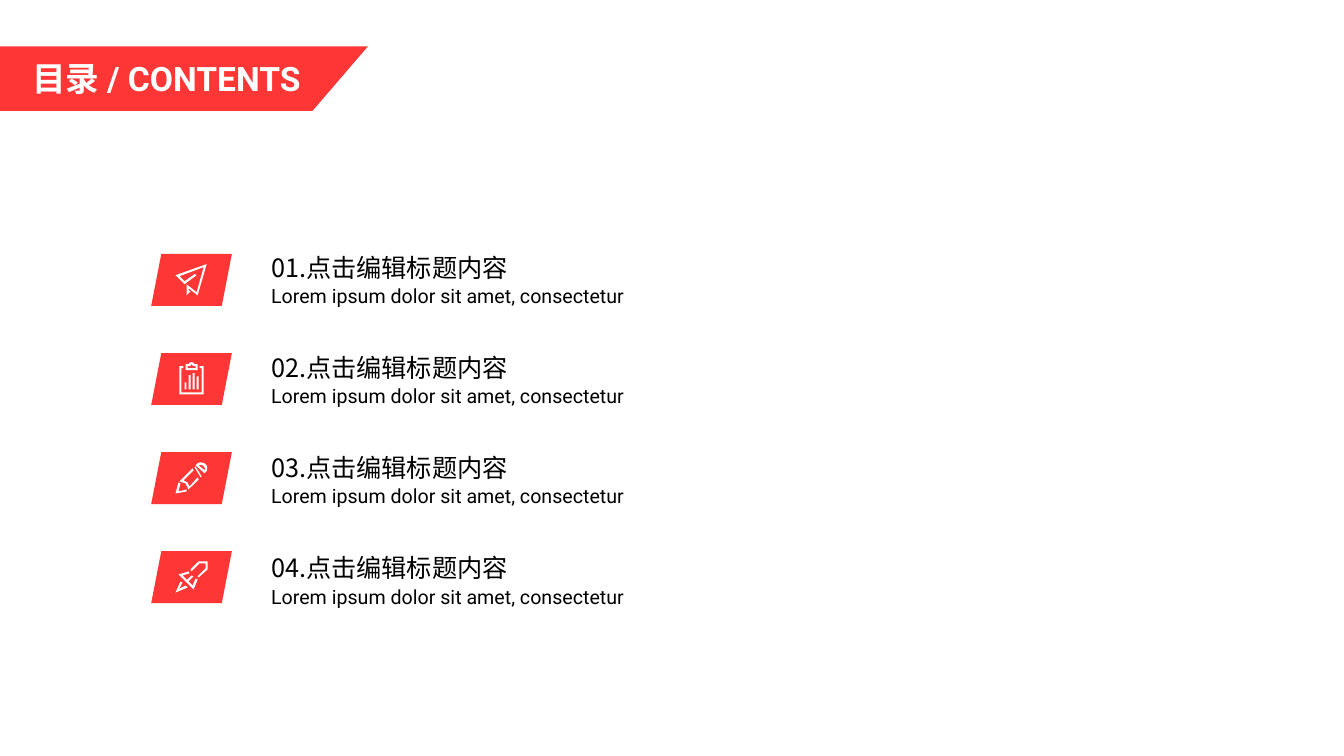
"""Build a contents slide with a title banner and four icon rows."""
from lxml.etree import SubElement
from pptx import Presentation
from pptx.dml.color import RGBColor
from pptx.enum.shapes import MSO_SHAPE as Preset
from pptx.enum.text import MSO_AUTO_SIZE as AutoSize, PP_ALIGN as Align
from pptx.oxml.ns import qn
from pptx.util import Inches, Pt

COLORS = {"red": "FF3636", "white": "FFFFFF", "black": "000000"}
CJK_FONT, LATIN_FONT = "Noto Sans CJK SC", "Roboto"
UNIT = 0.01
BADGE_LEFT, BADGE_TOP, BADGE_PITCH = 1.5, 2.52, 0.983
TEXT_LEFT, TEXT_TOP, TEXT_PITCH = 2.59, 2.45, 0.993
BAR_BOTTOM, BAR_WIDTH = 36, 2

BANNER = [[(-65, 64), (-10, 0), (365, 0), (310, 64)]]
BADGE = [[(10, 0), (80, 0), (70, 51.5), (0, 51.5)]]
PLANE = [
    [[(46, 41), (37, 34), (37, 36), (39, 37), (35, 41), (35, 30), (45, 38), (52, 13),
      (28, 22), (33, 27), (43, 20), (45, 21), (33, 30), (24, 21), (55, 10)]],
]
CLIPBOARD = [
    [[(52, 41), (28, 41), (28, 13), (32, 13), (32, 15), (30, 15),
      (30, 39), (50, 39), (50, 15), (48, 15), (48, 13), (52, 13)]],
    [[(46, 17), (34, 17), (34, 11), (37, 11), (38, 9.5), (40, 9), (42, 9.5), (43, 11), (46, 11)],
     [(36, 15), (44, 15), (44, 13), (41, 13), (41, 12), (40, 11), (39, 12), (39, 13), (36, 13)]],
]
PENCIL = [
    [[(53, 21), (44, 13), (45, 12), (47, 10.5), (49, 10), (52, 10.7), (54, 12),
      (55.5, 14), (55.5, 18), (54, 20)],
     [(47, 13), (53, 18), (53.5, 16), (52, 14), (50, 12.5)]],
    [[(49, 25), (43, 15), (44, 14), (50, 24)]],
    [[(24, 41), (27, 30), (29, 31), (27, 39), (35, 37), (35, 39)]],
    [[(37, 37), (34, 31), (28, 29), (41, 16), (42, 18), (32, 28), (36, 30),
      (38, 34), (46, 25), (47, 27)]],
]
ROCKET = [
    [[(47, 26), (46, 25), (54, 17), (54, 12), (48, 12), (40, 20), (39, 18),
      (47, 10), (56, 10), (56, 18)]],
    [[(42, 38), (27, 23), (37, 20), (38, 22), (31, 24), (41, 34), (44, 27), (46, 28)]],
    [[(24, 41), (29, 30), (31, 31), (28, 37), (34, 34), (36, 36)]],
    [[(36, 31), (35, 29), (40, 24), (42, 25)]],
]
CHART_BARS = [(33, 7), (37, 14), (41, 16), (45, 13)]
ROWS = [
    ("01.点击编辑标题内容", PLANE, []),
    ("02.点击编辑标题内容", CLIPBOARD, CHART_BARS),
    ("03.点击编辑标题内容", PENCIL, []),
    ("04.点击编辑标题内容", ROCKET, []),
]


def add_outline(shapes, contours, left, top, color):
    builder = None
    for contour in contours:
        points = [(x * 10, y * 10) for x, y in contour]
        if builder is None:
            builder = shapes.build_freeform(*points[0], scale=Inches(UNIT) / 10)
        else:
            builder.move_to(*points[0])
        builder.add_line_segments(points[1:], close=True)
    outline = builder.convert_to_shape(Inches(left), Inches(top))
    outline.shadow.inherit = False
    outline.fill.solid()
    outline.fill.fore_color.rgb = RGBColor.from_string(COLORS[color])
    outline.line.fill.background()


def add_text(shapes, text, bounds, size, font, color, bold=False, align=Align.LEFT):
    box = shapes.add_textbox(*map(Inches, bounds))
    box.text_frame.word_wrap = True
    box.text_frame.auto_size = AutoSize.SHAPE_TO_FIT_TEXT
    para = box.text_frame.paragraphs[0]
    para.text = text
    para.alignment = align
    para.font.size, para.font.bold, para.font.name = Pt(size), bold, font
    para.font.color.rgb = RGBColor.from_string(COLORS[color])
    defaults = para._p.find(".//" + qn("a:defRPr"))
    SubElement(defaults, qn("a:ea")).set("typeface", CJK_FONT)


deck = Presentation()
deck.slide_width, deck.slide_height = Inches(13.33), Inches(7.5)
page = deck.slides.add_slide(deck.slide_layouts[6])

for index, (heading, icon, bars) in enumerate(ROWS):
    row = page.shapes.add_group_shape().shapes
    badge_top = BADGE_TOP + index * BADGE_PITCH
    text_top = TEXT_TOP + index * TEXT_PITCH
    add_outline(row, BADGE, BADGE_LEFT, badge_top, "red")
    for contours in icon:
        add_outline(row, contours, BADGE_LEFT, badge_top, "white")
    for x, height in bars:
        bar = row.add_shape(
            Preset.RECTANGLE,
            Inches(BADGE_LEFT + x * UNIT), Inches(badge_top + (BAR_BOTTOM - height) * UNIT),
            Inches(BAR_WIDTH * UNIT), Inches(height * UNIT),
        )
        bar.shadow.inherit = False
        bar.fill.solid()
        bar.fill.fore_color.rgb = RGBColor.from_string(COLORS["white"])
        bar.line.fill.background()
    add_text(row, heading, (TEXT_LEFT, text_top, 2.89, 0.4), 18, CJK_FONT, "black")
    add_text(row, "Lorem ipsum dolor sit amet, consectetur",
             (TEXT_LEFT, text_top + 0.32, 4.74, 0.34), 14, LATIN_FONT, "black")

add_outline(page.shapes, BANNER, 0, 0.46, "red")
add_text(page.shapes, "目录 / CONTENTS", (0, 0.53, 3.08, 0.5), 24, LATIN_FONT, "white",
         bold=True, align=Align.RIGHT)

deck.save("out.pptx")
